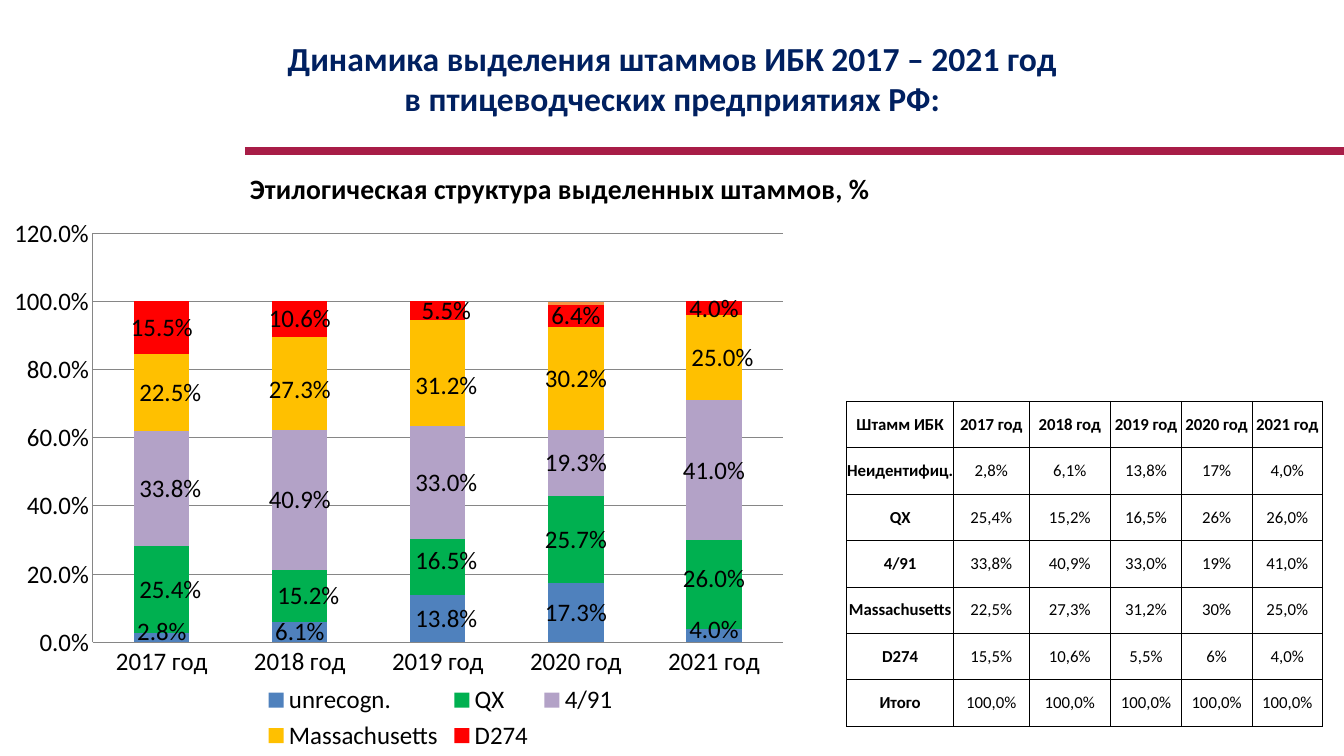
from lxml import etree
from pptx import Presentation
from pptx.chart.data import CategoryChartData
from pptx.dml.color import RGBColor
from pptx.enum.chart import XL_CHART_TYPE as ChartType, XL_LEGEND_POSITION as LegendPosition
from pptx.enum.chart import XL_TICK_MARK as TickMark
from pptx.enum.shapes import MSO_CONNECTOR as Connector
from pptx.enum.text import MSO_ANCHOR as Anchor, PP_ALIGN as Align
from pptx.oxml import parse_xml
from pptx.oxml.ns import nsdecls, qn
from pptx.util import Cm, Pt

# Content
FONT = "Calibri"
TITLE = "Динамика выделения штаммов ИБК 2017 – 2021 год\vв птицеводческих предприятиях РФ:"
CHART_TITLE = "Этилогическая структура выделенных штаммов, %"
YEARS = ["2017 год", "2018 год", "2019 год", "2020 год", "2021 год"]
# name, colour, shares, label shifts {year index: (x, y)} as fractions of the chart
STRAINS = [
    ("unrecogn.", "4F81BD", (0.028, 0.061, 0.138, 0.173, 0.04),
     {0: (0, -0.01), 2: (0.01, 0), 4: (0, -0.01)}),
    ("QX", "00B050", (0.254, 0.152, 0.165, 0.257, 0.26),
     {0: (0.01, 0), 1: (0.01, 0), 2: (0.01, -0.01), 4: (0, -0.01)}),
    ("4/91", "B3A2C7", (0.338, 0.409, 0.33, 0.193, 0.41),
     {0: (0.01, 0), 2: (0.01, 0)}),
    ("Massachusetts", "FFC000", (0.225, 0.273, 0.312, 0.302, 0.25),
     {0: (0.01, 0), 1: (0, 0.01), 2: (0.01, 0.02), 4: (0.01, 0)}),
    ("D274", "FF0000", (0.155, 0.106, 0.055, 0.064, 0.04), {2: (0.01, 0)}),
    ("Series 6", "F79646", (None, None, None, 0.01, 0), None),
]
TABLE_ROWS = [
    ["Штамм ИБК", *YEARS],
    ["Неидентифиц.", "2,8%", "6,1%", "13,8%", "17%", "4,0%"],
    ["QX", "25,4%", "15,2%", "16,5%", "26%", "26,0%"],
    ["4/91", "33,8%", "40,9%", "33,0%", "19%", "41,0%"],
    ["Massachusetts", "22,5%", "27,3%", "31,2%", "30%", "25,0%"],
    ["D274", "15,5%", "10,6%", "5,5%", "6%", "4,0%"],
    ["Итого"] + ["100,0%"] * 5,
]
COLUMN_WIDTHS = [2.69, 1.9, 2.06, 1.78, 1.78, 1.78]
ROW_HEIGHT = 1.17


def colour(value):
    return RGBColor.from_string(value)


def style_font(font, size, shade="000000", bold=False):
    font.name, font.size, font.bold = FONT, Pt(size), bold
    font.color.rgb = colour(shade)


def layout_xml(x, y, w=None, h=None, inner=False, edge=False):
    parts = '<c:layoutTarget val="inner"/>' if inner else ""
    if edge:
        parts += '<c:xMode val="edge"/><c:yMode val="edge"/>'
    for tag, value in zip("xywh", (x, y, w, h)):
        if value is not None:
            parts += f'<c:{tag} val="{value}"/>'
    return f'<c:layout {nsdecls("c")}><c:manualLayout>{parts}</c:manualLayout></c:layout>'


def replace_layout(parent, index, xml):
    for old in parent.findall(qn("c:layout")):
        parent.remove(old)
    parent.insert(index, parse_xml(xml))


# Slide
deck = Presentation()
deck.slide_width, deck.slide_height = Cm(33.87), Cm(19.05)
page = deck.slides.add_slide(deck.slide_layouts[6])

# Rule under the heading
rule = page.shapes.add_connector(Connector.STRAIGHT, Cm(6.17), Cm(3.8), Cm(33.87), Cm(3.8))
rule.line.color.rgb = colour("A81D47")
rule.line.width = Pt(6)
etree.SubElement(rule.line._ln.getparent(), qn("a:effectLst"))

# Heading
box = page.shapes.add_textbox(Cm(1.7), Cm(0.86), Cm(30.48), Cm(2.2))
box.text_frame.word_wrap = True
box.text_frame.vertical_anchor = Anchor.MIDDLE
box.text_frame.text = TITLE
para = box.text_frame.paragraphs[0]
para.alignment = Align.CENTER
for span in para.runs:
    style_font(span.font, 24, "002060", True)

# Stacked chart
data = CategoryChartData(number_format="0.0%")
data.categories = YEARS
for name, _, shares, _ in STRAINS:
    data.add_series(name, shares)
chart = page.shapes.add_chart(ChartType.COLUMN_STACKED, Cm(0.36), Cm(3.33),
                              Cm(21.69), Cm(15.72), data).chart
style_font(chart.font, 18)
chart.has_title = True
chart.chart_title.text_frame.text = CHART_TITLE
style_font(chart.chart_title.text_frame.paragraphs[0].runs[0].font, 20, bold=True)
chart.chart_title.include_in_layout = False
replace_layout(chart.chart_title._element, 1, layout_xml(0.27, 0.05, edge=True))

plot = chart.plots[0]
plot.gap_width, plot.overlap, plot.vary_by_categories = 150, 100, False
replace_layout(plot._element.getparent(), 0,
               layout_xml(0.091, 0.162, 0.812, 0.656, inner=True, edge=True))

share_axis = chart.value_axis
share_axis.minimum_scale, share_axis.maximum_scale, share_axis.major_unit = 0, 1.2, 0.2
share_axis.tick_labels.number_format = "0.0%"
share_axis.tick_labels.number_format_is_linked = False
for line in (share_axis.major_gridlines.format.line, share_axis.format.line,
             chart.category_axis.format.line):
    line.color.rgb = colour("868686")
    line.width = Pt(0.75)
for axis in (share_axis, chart.category_axis):
    axis.major_tick_mark = axis.minor_tick_mark = TickMark.NONE

# Legend without the unnamed last series
chart.has_legend = True
chart.legend.position = LegendPosition.BOTTOM
chart.legend.include_in_layout = False
chart.legend._element.insert(1, parse_xml(
    f'<c:legendEntry {nsdecls("c")}><c:idx val="5"/><c:delete val="1"/></c:legendEntry>'))

# Series colours and value labels
for series, (_, shade, _, shifts) in zip(plot.series, STRAINS):
    series.format.fill.solid()
    series.format.fill.fore_color.rgb = colour(shade)
    series.invert_if_negative = False
    if shifts is None:
        continue
    labels = series.data_labels
    labels.show_value = True
    labels.number_format, labels.number_format_is_linked = "0.0%", False
    for order, (year, (x, y)) in enumerate(shifts.items()):
        flags = "".join(f'<c:show{flag} val="{int(flag == "Val")}"/>' for flag in
                        ("LegendKey", "Val", "CatName", "SerName", "Percent", "BubbleSize"))
        labels._element.insert(order, parse_xml(
            f'<c:dLbl {nsdecls("c")}><c:idx val="{year}"/>{layout_xml(x, y)}{flags}</c:dLbl>'))

# Table of shares
table = page.shapes.add_table(len(TABLE_ROWS), len(COLUMN_WIDTHS), Cm(21.34), Cm(10.11),
                              Cm(sum(COLUMN_WIDTHS)), Cm(ROW_HEIGHT * len(TABLE_ROWS))).table
table.first_row = table.horz_banding = False
for column, width in zip(table.columns, COLUMN_WIDTHS):
    column.width = Cm(width)
for r, texts in enumerate(TABLE_ROWS):
    table.rows[r].height = Cm(ROW_HEIGHT)
    for c, text in enumerate(texts):
        cell = table.cell(r, c)
        cell.text = text
        cell.vertical_anchor = Anchor.MIDDLE
        cell.margin_left = cell.margin_right = cell.margin_top = cell.margin_bottom = 0
        para = cell.text_frame.paragraphs[0]
        para.alignment = Align.CENTER
        style_font(para.runs[0].font, 12, bold=r == 0 or c == 0)
        properties = cell._tc.get_or_add_tcPr()
        for side in "LRTB":
            properties.append(parse_xml(
                f'<a:ln{side} {nsdecls("a")} w="{Pt(0.5)}"><a:solidFill>'
                f'<a:srgbClr val="000000"/></a:solidFill></a:ln{side}>'))
        cell.fill.background()

deck.save("out.pptx")
